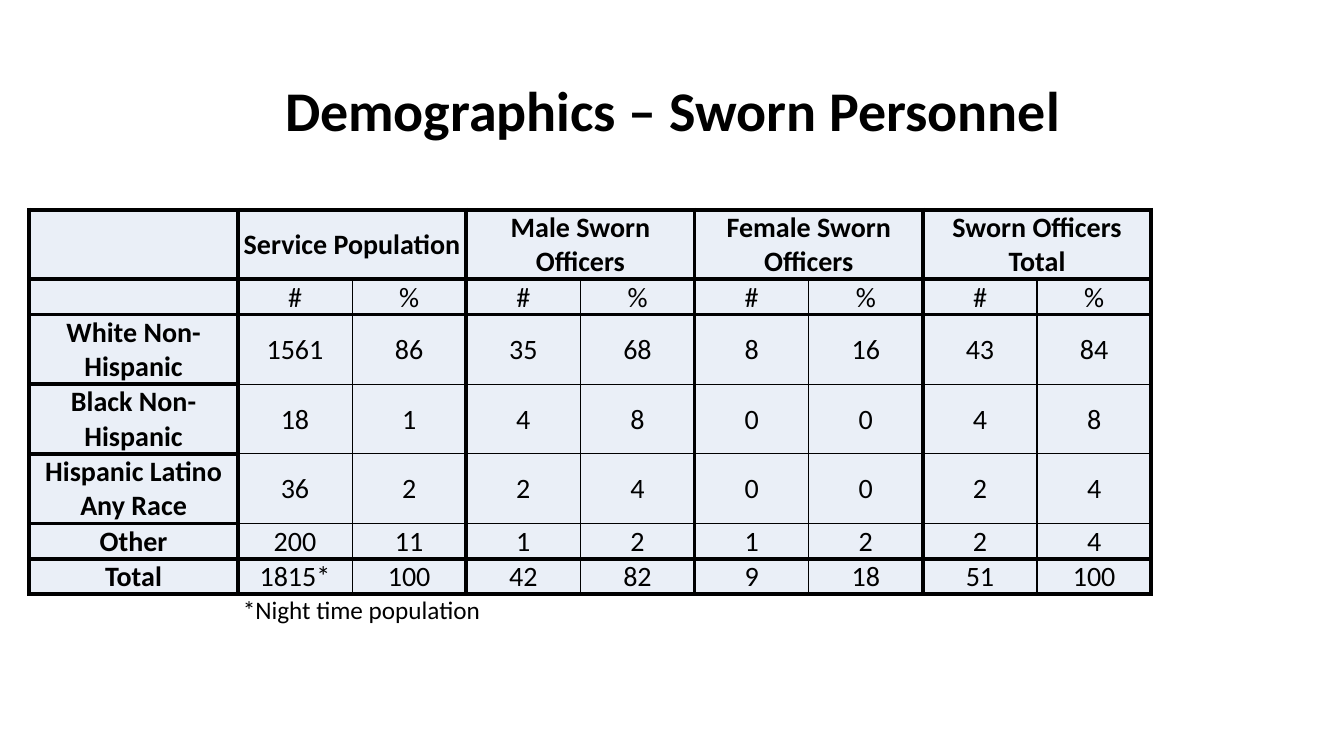
import pptx
import pptx.dml.color
import pptx.enum.text
import pptx.oxml
import pptx.oxml.ns
import pptx.util
from pptx.util import Inches

BLACK = pptx.dml.color.RGBColor(0x00, 0x00, 0x00)
PALE = pptx.dml.color.RGBColor(0xEA, 0xEF, 0xF7)
FONT = "Calibri"
THICK, THIN = 3, 1
CENTER = pptx.enum.text.PP_ALIGN.CENTER
MIDDLE = pptx.enum.text.MSO_ANCHOR.MIDDLE

GROUPS = ["Service Population", "Male Sworn Officers",
          "Female Sworn Officers", "Sworn Officers Total"]
COUNTS = [
    ["White Non-Hispanic", "1561", "86", "35", "68", "8", "16", "43", "84"],
    ["Black Non-Hispanic", "18", "1", "4", "8", "0", "0", "4", "8"],
    ["Hispanic Latino Any Race", "36", "2", "2", "4", "0", "0", "2", "4"],
    ["Other", "200", "11", "1", "2", "1", "2", "2", "4"],
    ["Total", "1815*", "100", "42", "82", "9", "18", "51", "100"],
]
HEADS = [""] + [text for group in GROUPS for text in (group, "")]
ROWS = [HEADS, [""] + ["#", "%"] * len(GROUPS)] + COUNTS
HEIGHTS = [0.68, 0.34, 0.68, 0.68, 0.68, 0.34, 0.34]
WIDTHS = [2.07] + [1.1325] * 8


def set_font(para, size, bold=False):
    font = para.font
    font.name = FONT
    font.size = pptx.util.Pt(size)
    font.bold = bold
    font.color.rgb = BLACK


def add_title(slide, text):
    title = slide.shapes.title
    title.left, title.top = Inches(0.92), Inches(0.4)
    title.width, title.height = Inches(11.5), Inches(1.45)
    frame = title.text_frame
    frame.text = text
    frame.vertical_anchor = MIDDLE
    para = frame.paragraphs[0]
    para.alignment = CENTER
    para.line_spacing = 0.9
    set_font(para, 40, True)


def edge_widths(row, col):
    """Thick lines frame the headings, each pair of columns and the total."""
    if row == 0 or col == 0:
        return dict.fromkeys("LRTB", THICK)
    return {
        "L": THICK if col % 2 else THIN,
        "R": THIN if col % 2 else THICK,
        "T": THICK if row in (1, 2, 6) else THIN,
        "B": THICK if row in (1, 5, 6) else THIN,
    }


def set_edges(cell, widths):
    props = cell._tc.get_or_add_tcPr()
    for side, width in widths.items():
        props.append(pptx.oxml.parse_xml(
            f'<a:ln{side} {pptx.oxml.ns.nsdecls("a")} w="{pptx.util.Pt(width)}">'
            f'<a:solidFill><a:srgbClr val="{BLACK}"/></a:solidFill>'
            f'<a:prstDash val="solid"/></a:ln{side}>'))


def fill_cell(cell, text, bold):
    cell.fill.solid()
    cell.fill.fore_color.rgb = PALE
    cell.margin_left = cell.margin_right = cell.margin_top = Inches(0.01)
    cell.margin_bottom = 0
    cell.vertical_anchor = MIDDLE
    if text:
        cell.text = text
    para = cell.text_frame.paragraphs[0]
    para.alignment = CENTER
    set_font(para, 20, bold)


def add_counts(slide):
    table = slide.shapes.add_table(
        len(ROWS), len(WIDTHS), Inches(0.29), Inches(2.08),
        Inches(sum(WIDTHS)), Inches(sum(HEIGHTS))).table
    for column, width in zip(table.columns, WIDTHS):
        column.width = Inches(width)
    for line, height in zip(table.rows, HEIGHTS):
        line.height = Inches(height)
    for row, texts in enumerate(ROWS):
        for col, text in enumerate(texts):
            cell = table.cell(row, col)
            set_edges(cell, edge_widths(row, col))
            fill_cell(cell, text, row == 0 or col == 0)
    for col in range(1, len(WIDTHS), 2):
        table.cell(0, col).merge(table.cell(0, col + 1))


def add_note(slide, text):
    box = slide.shapes.add_textbox(
        Inches(2.31), Inches(5.85), Inches(9.53), Inches(0.4))
    frame = box.text_frame
    frame.word_wrap = True
    frame.auto_size = pptx.enum.text.MSO_AUTO_SIZE.SHAPE_TO_FIT_TEXT
    frame.text = text
    set_font(frame.paragraphs[0], 18)


def main():
    deck = pptx.Presentation()
    deck.slide_width, deck.slide_height = Inches(13.33), Inches(7.5)
    slide = deck.slides.add_slide(deck.slide_layouts.get_by_name("Title Only"))
    add_title(slide, "Demographics – Sworn Personnel")
    add_counts(slide)
    add_note(slide, "*Night time population")
    deck.save("out.pptx")


if __name__ == "__main__":
    main()
